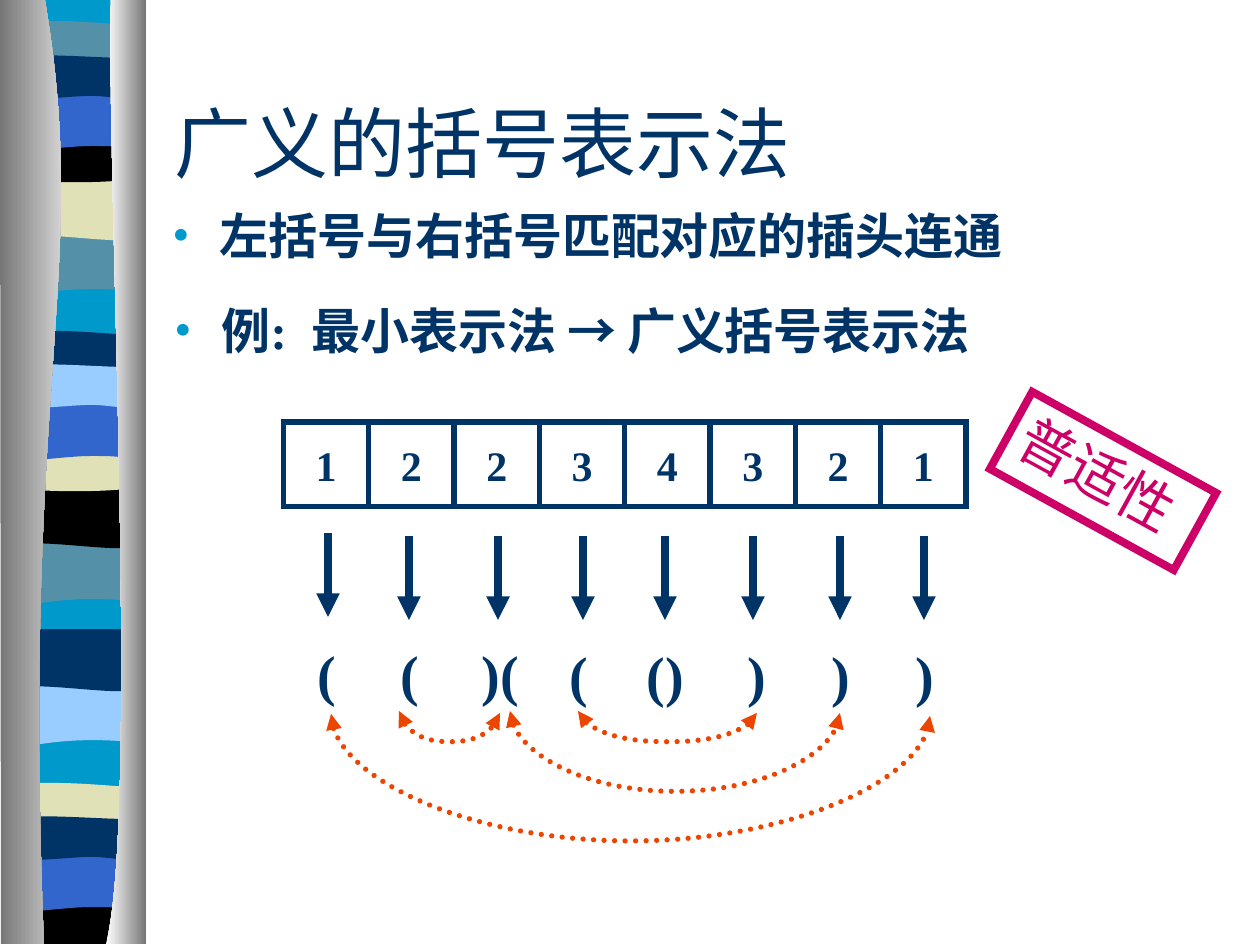
from lxml import etree
from pptx import Presentation, util as u
from pptx.dml.color import RGBColor
from pptx.enum import shapes as s, text as t
from pptx.oxml import ns

SCALE = 914400 / 126
THEME = dict(navy="003366", sky="0099CC", teal="5490A8", sand="E1E1B7",
             black="000000", blue="3366CC", pale="99CCFF", grey="767676",
             white="FFFFFF", red="EC4502", pink="CC0066",
             serif="Times New Roman", sans="Arial", plain="DejaVu Sans",
             title=44, body=28, cell=24, mark=32)

WAVES = {
    "base": [(143, 0), (143, 942), (7, 942), (7, 0)],
    "drop": [(143, 0), (143, 59), (49, 49, 30, 69, 6, 59), (6, 0)],
    "swell": [(143, 0), (143, 59), (121, 69, 49, 52, 7, 59), (7, 0)],
    "lens": [(143, 0), (143, 30), (121, 36, 30, 36, 6, 30), (6, 0),
             (15, -6, 37, -5, 59, -5), (82, -5, 126, -1, 143, 0)],
    "bowl": [(143, 0), (143, 41), (121, 48, 30, 48, 6, 41), (6, 0),
             (91, 6, 115, 0, 143, 0)],
    "foot": [(143, 0), (143, 47), (7, 47), (6, 0), (91, 6, 115, 0, 143, 0)],
    "arch": [(143, 0), (143, 59), (122, 53, 113, 53, 91, 53),
             (68, 53, 28, 59, 6, 59), (6, 0)],
    "slab": [(143, 0), (143, 38), (135, 45, 113, 38, 91, 38),
             (68, 38, 21, 45, 6, 38), (6, 0), (26, -6, 100, 0, 122, 0),
             (145, 0, 139, 0, 143, 0)],
    "left": [(45, 0), (91, 272, 21, 373, 44, 944), (1, 944), (0, 0)],
    "right": [(111, 0), (106, 158, 140, 814, 106, 944), (146, 944), (146, 0)],
}
BANDS = [
    ("base", "sky", 0), ("drop", "teal", 233), ("swell", "sand", 178),
    ("lens", "teal", 26), ("bowl", "black", 136), ("arch", "blue", 93),
    ("slab", "navy", 58), ("drop", "teal", 543), ("swell", "black", 486),
    ("lens", "navy", 336), ("bowl", "sand", 445), ("arch", "blue", 403),
    ("slab", "pale", 367), ("drop", "pale", 684), ("swell", "navy", 629),
    ("lens", "sand", 788), ("foot", "black", 897), ("arch", "blue", 854),
    ("slab", "navy", 819),
]
PIPES = [("left", ("grey", "white")), ("right", ("white", "grey"))]

TITLE = "广义的括号表示法"
POINTS = [
    ((160, 199, 1099, 95), [("左括号与右括号匹配对应的插头连通", "sans")]),
    ((162, 294, 993, 95), [("例", "sans"),
                           (":  最小表示法 → 广义括号表示法", "serif")]),
]
CODES = "12234321"
MARKS = [("(", 305, 633, 53, 328, 533), ("(", 388, 633, 53, 409, 536),
         (")(", 469, 633, 95, 498, 536), ("(", 557, 634, 53, 583, 536),
         ("()", 634, 634, 95, 665, 536), (")", 735, 634, 53, 753, 536),
         (")", 819, 634, 53, 840, 536), (")", 903, 634, 53, 924, 536)]
ARCS = [(331, 930, 715, 128), (510, 840, 712, 81),
        (578, 757, 712, 31), (399, 500, 712, 31)]
STAMP = ("普适性", (998, 437, 210, 88), 28.8)


def px(*vals):
    return [u.Emu(round(v * SCALE)) for v in vals]


def tint(name):
    return RGBColor.from_string(THEME[name])


def put(obj, **vals):
    for key, val in vals.items():
        setattr(obj, key, val)


def node(top, tag, **vals):
    return etree.SubElement(top, ns.qn(tag), **vals)


def wave(art, kind, dy):
    segs = WAVES[kind]
    pts = [(seg[i], seg[i + 1] + dy) for seg in segs
           for i in range(0, len(seg), 2)]
    form = art.build_freeform(*pts[0], scale=SCALE)
    form.add_line_segments(pts[1:], close=True)
    shape = form.convert_to_shape()
    lines = iter(list(shape._element.iter(ns.qn("a:lnTo"))))
    for seg in segs[1:]:
        group = [next(lines) for _ in range(len(seg) // 2)]
        if len(group) == 3:
            curve = etree.Element(ns.qn("a:cubicBezTo"))
            group[0].addprevious(curve)
            for line in group:
                curve.append(line[0])
                line.getparent().remove(line)
    shape.shadow.inherit = False
    shape.line.fill.background()
    return shape


def write(shape, runs, size, color="navy", bold=True, gap=0, **frame):
    put(shape.text_frame, **{"word_wrap": True, **frame})
    para = shape.text_frame.paragraphs[0]
    para.space_before = u.Pt(gap)
    for words, face in runs:
        run = para.add_run()
        run.text = words
        put(run.font, name=THEME[face], size=u.Pt(THEME[size]), bold=bold)
        run.font.color.rgb = tint(color)
    return para


def bullet(para):
    props = para._p.get_or_add_pPr()
    props.set("marL", "342900")
    props.set("indent", "-342900")
    node(node(props, "a:buClr"), "a:srgbClr", val=THEME["sky"])
    node(props, "a:buFont", typeface=THEME["serif"])
    node(props, "a:buChar", char="•")


def frame(art, box, color, width):
    shape = art.add_shape(s.MSO_SHAPE.RECTANGLE, *px(*box))
    shape.shadow.inherit = False
    shape.fill.background()
    shape.line.color.rgb = tint(color)
    shape.line.width = u.Pt(width)
    node(shape.line._get_or_add_ln(), "a:miter", lim="800000")
    return shape


def wire(art, kind, ends, color, width, tips, dash=None):
    link = art.add_connector(kind, *px(*ends))
    link.line.color.rgb = tint(color)
    link.line.width = u.Pt(width)
    line = link.line._get_or_add_ln()
    if dash:
        line.set("cap", "rnd")
        node(line, "a:prstDash", val=dash)
    for tip in tips:
        node(line, tip, type="triangle")
    node(link._element.spPr, "a:effectLst")
    return link


def arc(art, x1, x2, y, dip):
    mid, half, thin = (x1 + x2) / 2, (x2 - x1) / 2, 2
    link = wire(art, s.MSO_CONNECTOR.CURVE,
                (mid - thin / 2, y - half, mid + thin / 2, y + half),
                "red", 3, ("a:headEnd", "a:tailEnd"), "sysDot")
    props = link._element.spPr
    put(props.xfrm, rot=270, flipH=True)
    guides = props.find(ns.qn("a:prstGeom")).get_or_add_avLst()
    node(guides, "a:gd", name="adj1", fmla=f"val {dip * 100000 // thin}")


def main():
    deck = Presentation()
    put(deck, slide_width=u.Inches(10), slide_height=u.Inches(7.5))
    art = deck.slides.add_slide(deck.slide_layouts[6]).shapes

    for kind, color, y in BANDS:
        fill = wave(art, kind, y).fill
        fill.solid()
        fill.fore_color.rgb = tint(color)
    for kind, colors in PIPES:
        fill = wave(art, kind, 0).fill
        fill.gradient()
        fill.gradient_angle = 0
        for stop, color in zip(fill.gradient_stops, colors):
            stop.color.rgb = tint(color)

    head = art.add_textbox(*px(162, 63, 1071, 158))
    write(head, [(TITLE, "serif")], "title", bold=False,
          vertical_anchor=t.MSO_ANCHOR.MIDDLE)
    for box, runs in POINTS:
        bullet(write(art.add_textbox(*px(*box)), runs, "body", gap=5.6))

    for i, code in enumerate(CODES):
        cell = frame(art, (283.5 + 85.33 * i, 422, 85.33, 84.5), "navy", 3)
        para = write(cell, [(code, "serif")], "cell", word_wrap=False,
                     vertical_anchor=t.MSO_ANCHOR.MIDDLE)
        para.alignment = t.PP_ALIGN.CENTER
    for mark, x, y, wide, stem, top in MARKS:
        write(art.add_textbox(*px(x, y, wide, 79)), [(mark, "serif")],
              "mark", gap=16)
        wire(art, s.MSO_CONNECTOR.STRAIGHT, (stem, top, stem, top + 84),
             "navy", 4.5, ["a:tailEnd"])
    for ends in ARCS:
        arc(art, *ends)

    words, box, turn = STAMP
    stamp = frame(art, box, "pink", 4.5)
    stamp.rotation = turn
    para = write(stamp, [(words, "plain")], "mark", "pink", False, 16,
                 vertical_anchor=t.MSO_ANCHOR.TOP)
    para.alignment = t.PP_ALIGN.LEFT
    deck.save("out.pptx")


if __name__ == "__main__":
    main()
